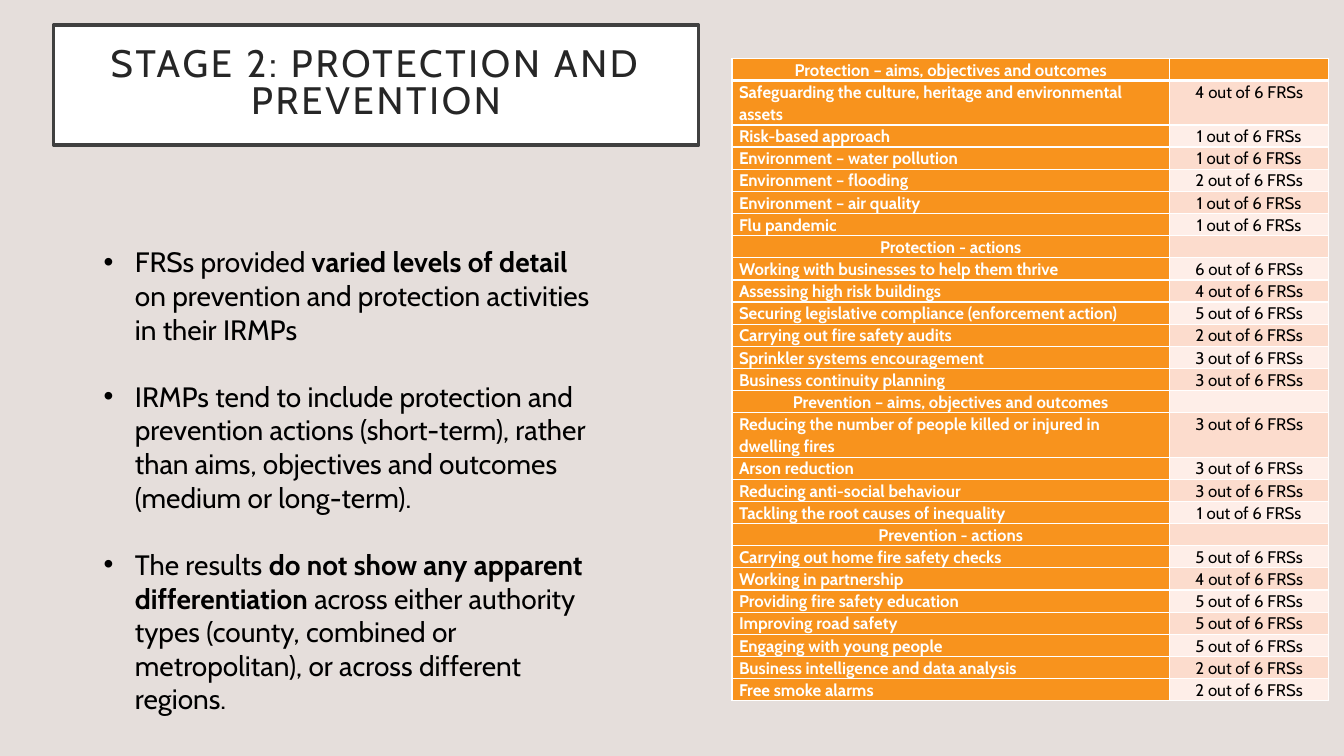
from dataclasses import dataclass
from typing import Optional

from lxml import etree
from pptx import Presentation
from pptx import util as u
from pptx.dml.color import RGBColor
from pptx.enum import text
from pptx.oxml import ns


@dataclass(frozen=True)
class Theme:
    font: str = "Cabin"
    background: str = "E5DEDB"
    white: str = "FFFFFF"
    black: str = "000000"
    title_text: str = "262626"
    title_line: str = "404040"
    orange: str = "F8931D"
    bands: tuple[str, str] = ("FEEEE8", "FCDCCD")
    title_size: float = 27.3
    body_size: float = 20
    table_size: float = 12


@dataclass(frozen=True)
class Row:
    label: str
    count: Optional[int] = None
    lines: int = 1


@dataclass(frozen=True)
class Bullet:
    before: str
    bold: str = ""
    after: str = ""


THEME = Theme()
ROW_HEIGHT = 0.22
COLUMN_WIDTHS = (4.34, 1.58)

ROWS = [
    Row("Protection – aims, objectives and outcomes"),
    Row("Safeguarding the culture, heritage and environmental assets", 4, lines=2),
    Row("Risk-based approach", 1),
    Row("Environment – water pollution", 1),
    Row("Environment – flooding", 2),
    Row("Environment – air quality", 1),
    Row("Flu pandemic", 1),
    Row("Protection - actions"),
    Row("Working with businesses to help them thrive", 6),
    Row("Assessing high risk buildings", 4),
    Row("Securing legislative compliance (enforcement action)", 5),
    Row("Carrying out fire safety audits", 2),
    Row("Sprinkler systems encouragement", 3),
    Row("Business continuity planning", 3),
    Row("Prevention – aims, objectives and outcomes"),
    Row("Reducing the number of people killed or injured in dwelling fires", 3, lines=2),
    Row("Arson reduction", 3),
    Row("Reducing anti-social behaviour", 3),
    Row("Tackling the root causes of inequality", 1),
    Row("Prevention - actions"),
    Row("Carrying out home fire safety checks", 5),
    Row("Working in partnership", 4),
    Row("Providing fire safety education", 5),
    Row("Improving road safety", 5),
    Row("Engaging with young people", 5),
    Row("Business intelligence and data analysis", 2),
    Row("Free smoke alarms", 2),
]

BULLETS = [
    Bullet("FRSs provided ", "varied levels of detail ",
           "on prevention and protection activities in their IRMPs"),
    Bullet("IRMPs tend to include protection and prevention actions (short-term), "
           "rather than aims, objectives and outcomes (medium or long-term)."),
    Bullet("The results ", "do not show any apparent differentiation",
           " across either authority types (county, combined or metropolitan), "
           "or across different regions."),
]


def write(paragraph, words: str, *, size: float, color: str, bold: bool = False,
          align=text.PP_ALIGN.LEFT, line_spacing: float = 1.0, tracking: float = 0) -> None:
    paragraph.alignment = align
    paragraph.line_spacing = line_spacing
    if not words:
        etree.SubElement(paragraph._p, ns.qn("a:endParaRPr"), sz=str(int(size * 100)))
        return
    run = paragraph.add_run()
    run.text = words
    run.font.name = THEME.font
    run.font.size = u.Pt(size)
    run.font.bold = bold
    run.font.color.rgb = RGBColor.from_string(color)
    if tracking:
        run._r.get_or_add_rPr().set("spc", str(int(tracking * 100)))


def paint(target, color: str) -> None:
    target.fill.solid()
    target.fill.fore_color.rgb = RGBColor.from_string(color)


def add_borders(cell, top: float, bottom: float) -> None:
    properties = cell._tc.get_or_add_tcPr()
    widths = {"lnL": 1, "lnR": 1, "lnT": top, "lnB": bottom}
    for position, (side, width) in enumerate(widths.items()):
        line = etree.Element(ns.qn(f"a:{side}"), w=str(u.Pt(width)))
        fill = etree.SubElement(line, ns.qn("a:solidFill"))
        etree.SubElement(fill, ns.qn("a:srgbClr"), val=THEME.white)
        properties.insert(position, line)


def fill_cell(cell, words: str, fill: str, color: str, bold: bool, align) -> None:
    cell.margin_left = cell.margin_right = u.Inches(0.07)
    cell.margin_top = cell.margin_bottom = 0
    paint(cell, fill)
    write(cell.text_frame.paragraphs[0], words, size=THEME.table_size, color=color,
          bold=bold, align=align, line_spacing=1.07)


def add_activity_table(slide, rows: list[Row]) -> None:
    height = ROW_HEIGHT * sum(row.lines for row in rows)
    table = slide.shapes.add_table(
        len(rows), len(COLUMN_WIDTHS), u.Inches(7.26), u.Inches(0.58),
        u.Inches(sum(COLUMN_WIDTHS)), u.Inches(height)).table
    table.first_row = table.horz_banding = False
    for column, width in zip(table.columns, COLUMN_WIDTHS):
        column.width = u.Inches(width)
    for index, row in enumerate(rows):
        table.rows[index].height = u.Inches(ROW_HEIGHT * row.lines)
        section = row.count is None
        label, value = table.cell(index, 0), table.cell(index, 1)
        fill_cell(label, row.label, THEME.orange, THEME.white, True,
                  text.PP_ALIGN.CENTER if section else text.PP_ALIGN.LEFT)
        fill_cell(value, "" if section else f"{row.count} out of 6 FRSs",
                  THEME.bands[index % 2] if index else THEME.orange,
                  THEME.black, False, text.PP_ALIGN.CENTER)
        for cell in (label, value):
            add_borders(cell, top=3 if index == 1 else 1, bottom=3 if index == 0 else 1)


def add_bullets(slide, bullets: list[Bullet]) -> None:
    box = slide.shapes.add_textbox(u.Inches(0.93), u.Inches(2.38), u.Inches(5.07), u.Inches(5.15))
    frame = box.text_frame
    frame.word_wrap = True
    frame.auto_size = text.MSO_AUTO_SIZE.SHAPE_TO_FIT_TEXT
    for index, bullet in enumerate(bullets):
        paragraph = frame.add_paragraph() if index else frame.paragraphs[0]
        for words, bold in ((bullet.before, False), (bullet.bold, True), (bullet.after, False)):
            if words:
                write(paragraph, words, size=THEME.body_size, color=THEME.black, bold=bold)
        if index:
            paragraph.space_before = u.Pt(24)
        properties = paragraph._p.get_or_add_pPr()
        properties.set("marL", str(u.Inches(0.31)))
        properties.set("indent", str(u.Inches(-0.31)))
        etree.SubElement(properties, ns.qn("a:buFont"), typeface="Arial")
        etree.SubElement(properties, ns.qn("a:buChar"), char="•")


def format_title(title, words: str) -> None:
    title.left, title.top = u.Inches(0.53), u.Inches(0.25)
    title.width, title.height = u.Inches(6.4), u.Inches(1.19)
    paint(title, THEME.white)
    title.line.color.rgb = RGBColor.from_string(THEME.title_line)
    title.line.width = u.Pt(2.5)
    frame = title.text_frame
    frame.word_wrap = True
    frame.auto_size = text.MSO_AUTO_SIZE.NONE
    frame.vertical_anchor = text.MSO_ANCHOR.MIDDLE
    frame.margin_left = frame.margin_right = u.Inches(0.2)
    frame.margin_top = frame.margin_bottom = u.Inches(0.2)
    write(frame.paragraphs[0], words, size=THEME.title_size, color=THEME.title_text,
          align=text.PP_ALIGN.CENTER, line_spacing=0.8, tracking=2)


def main() -> None:
    presentation = Presentation()
    presentation.slide_width = u.Inches(13.33)
    presentation.slide_height = u.Inches(7.5)
    slide = presentation.slides.add_slide(presentation.slide_layouts[5])
    paint(slide.background, THEME.background)
    add_activity_table(slide, ROWS)
    add_bullets(slide, BULLETS)
    format_title(slide.shapes.title, "STAGE 2: PROTECTION AND PREVENTION")
    presentation.save("out.pptx")


if __name__ == "__main__":
    main()
